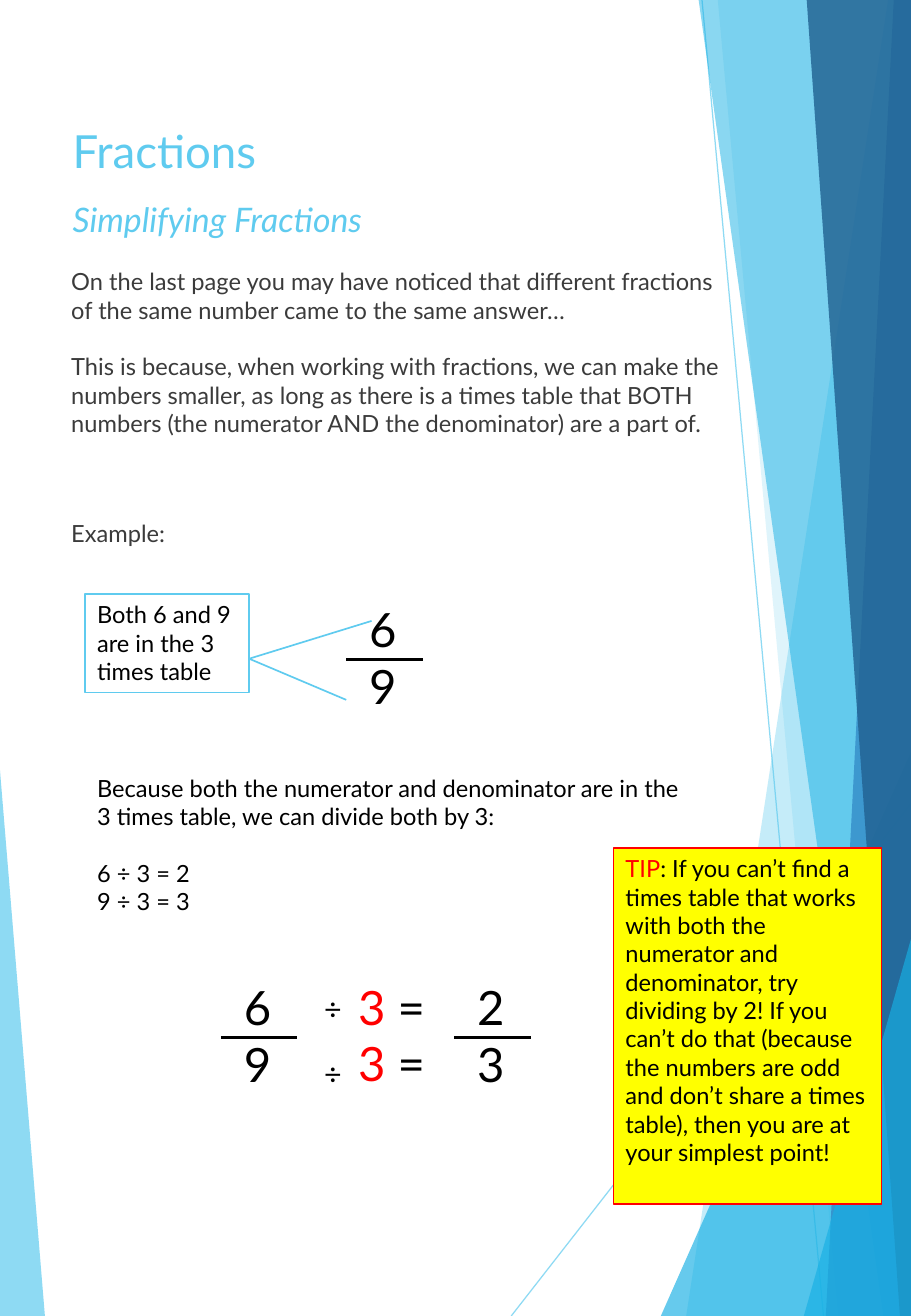
import dataclasses
import typing

import lxml.etree
import pptx
import pptx.dml.color
import pptx.enum.shapes
import pptx.enum.text
import pptx.oxml.ns
import pptx.util

Cm = pptx.util.Cm
Point = tuple[float, float]

WIDTH, HEIGHT = 19.05, 27.51


@dataclasses.dataclass(frozen=True)
class Theme:
    font: str = "Lato"
    sky: str = "5FCBEF"
    azure: str = "17B0E4"
    blue: str = "2E83C3"
    navy: str = "226292"
    grey: str = "3B3B3B"
    black: str = "000000"
    red: str = "FF0000"
    yellow: str = "FFFF00"
    title: float = 27
    head: float = 20
    body: float = 14
    sign: float = 18
    digit: float = 28
    gap: float = 16.8


THEME = Theme()


@dataclasses.dataclass(frozen=True)
class Shard:
    points: list[Point]
    colour: str
    alpha: int


@dataclasses.dataclass(frozen=True)
class Stroke:
    start: Point
    end: Point
    colour: str
    weight: float
    alpha: int = 100


@dataclasses.dataclass(frozen=True)
class Run:
    text: str
    colour: str


@dataclasses.dataclass(frozen=True)
class Para:
    runs: list[Run]
    gap: float = 0


@dataclasses.dataclass(frozen=True)
class Block:
    left: float
    top: float
    width: float
    height: float
    size: float
    paras: list[Para]
    slant: bool = False
    fill: typing.Optional[str] = None
    edge: typing.Optional[str] = None


@dataclasses.dataclass(frozen=True)
class Ratio:
    left: float
    bar: float
    upper: str
    lower: str


def band(top: float, foot: float) -> list[Point]:
    """Outline from a slanted edge to the right side of the page."""
    return [(top, 0), (foot, HEIGHT), (WIDTH, HEIGHT), (WIDTH, 0)]


def wedge(foot: float, peak: float) -> list[Point]:
    """Triangle in the lower right corner."""
    return [(foot, HEIGHT), (WIDTH, peak), (WIDTH, HEIGHT)]


def plain(text: str, colour: str = THEME.black, gap: float = 0) -> Para:
    return Para([Run(text, colour)], gap)


def rgb(code: str) -> pptx.dml.color.RGBColor:
    return pptx.dml.color.RGBColor.from_string(code)


def fade(shape, alpha: int) -> None:
    """Set the opacity, in percent, of the shape's first colour."""
    colour = shape.element.spPr.find(".//" + pptx.oxml.ns.qn("a:srgbClr"))
    node = lxml.etree.SubElement(colour, pptx.oxml.ns.qn("a:alpha"))
    node.set("val", str(alpha * 1000))


def draw_shard(slide, shard: Shard) -> None:
    points = [(Cm(x), Cm(y)) for x, y in shard.points]
    pen = slide.shapes.build_freeform(*points[0])
    pen.add_line_segments(points[1:], close=True)
    shape = pen.convert_to_shape()
    shape.shadow.inherit = False
    shape.fill.solid()
    shape.fill.fore_color.rgb = rgb(shard.colour)
    shape.line.fill.background()
    fade(shape, shard.alpha)


def draw_stroke(slide, stroke: Stroke) -> None:
    ends = [Cm(v) for v in stroke.start + stroke.end]
    kind = pptx.enum.shapes.MSO_CONNECTOR.STRAIGHT
    line = slide.shapes.add_connector(kind, *ends)
    line.line.color.rgb = rgb(stroke.colour)
    line.line.width = pptx.util.Pt(stroke.weight)
    if stroke.alpha < 100:
        fade(line, stroke.alpha)
    lxml.etree.SubElement(line.element.spPr, pptx.oxml.ns.qn("a:effectLst"))


def draw_block(slide, block: Block) -> None:
    place = [Cm(v) for v in (block.left, block.top, block.width, block.height)]
    if block.edge:
        kind = pptx.enum.shapes.MSO_SHAPE.RECTANGLE
        shape = slide.shapes.add_shape(kind, *place)
        shape.shadow.inherit = False
        shape.line.color.rgb = rgb(block.edge)
        shape.line.width = pptx.util.Pt(0.75)
    else:
        shape = slide.shapes.add_textbox(*place)
    if block.fill:
        shape.fill.solid()
        shape.fill.fore_color.rgb = rgb(block.fill)
    else:
        shape.fill.background()
    frame = shape.text_frame
    frame.word_wrap = True
    frame.vertical_anchor = pptx.enum.text.MSO_ANCHOR.TOP
    for i, para in enumerate(block.paras):
        line = frame.add_paragraph() if i else frame.paragraphs[0]
        line.alignment = pptx.enum.text.PP_ALIGN.LEFT
        line.space_before = pptx.util.Pt(para.gap)
        line.font.name = THEME.font
        line.font.size = pptx.util.Pt(block.size)
        line.font.italic = block.slant
        line.font.color.rgb = rgb(para.runs[0].colour)
        for part in para.runs:
            run = line.add_run()
            run.text = part.text
            if part.colour != para.runs[0].colour:
                run.font.color.rgb = rgb(part.colour)


def draw_ratio(slide, ratio: Ratio) -> None:
    start, end = (ratio.left, ratio.bar), (ratio.left + 1.6, ratio.bar)
    draw_stroke(slide, Stroke(start, end, THEME.black, 1.5))
    paras = [plain(ratio.upper), plain(ratio.lower)]
    draw_block(slide, Block(ratio.left + 0.23, ratio.bar - 1.36, 2.74, 2.64,
                            THEME.digit, paras))


THREE = Para([Run("3 ", THEME.red), Run("=", THEME.black)])
FORK = (5.21, 13.77)

ITEMS = [
    Shard([(0, 16.1), (0.94, HEIGHT), (0, HEIGHT)], THEME.sky, 70),
    Stroke((10.69, HEIGHT), (19.08, 16.76), THEME.sky, 0.75, 70),
    Stroke((14.68, 0), (17.22, HEIGHT), THEME.sky, 0.75, 70),
    Shard(band(18.57, 14.35), THEME.sky, 36),
    Shard(band(15.01, 17.53), THEME.sky, 20),
    Shard(wedge(13.82, 15.72), THEME.azure, 66),
    Shard(band(14.61, 18.47), THEME.azure, 50),
    Shard(band(18.69, 17.27), THEME.blue, 70),
    Shard(band(16.87, 18.82), THEME.navy, 82),
    Shard(wedge(16.81, 19.63), THEME.azure, 66),
    Block(1.27, 2.44, 13.23, 5.31, THEME.title, [plain("Fractions", THEME.sky)]),
    Block(1.24, 5.46, 14.38, 4.45, THEME.body, [
        plain("On the last page you may have noticed that different fractions of "
              "the same number came to the same answer…", THEME.grey),
        plain("This is because, when working with fractions, we can make the "
              "numbers smaller, as long as there is a times table that BOTH numbers "
              "(the numerator AND the denominator) are a part of.",
              THEME.grey, THEME.gap)]),
    Block(1.27, 4.04, 13.23, 5.31, THEME.head,
          [plain("Simplifying Fractions", THEME.sky)], slant=True),
    Block(1.24, 10.72, 14.38, 0.86, THEME.body, [plain("Example:", THEME.grey)]),
    Ratio(7.24, 13.79, "6", "9"),
    Stroke((7.77, 12.98), FORK, THEME.sky, 1),
    Stroke((7.24, 14.63), FORK, THEME.sky, 1),
    Block(1.78, 12.42, 3.43, 2.06, THEME.body,
          [plain("Both 6 and 9 are in the 3 times table")], edge=THEME.sky),
    Block(1.78, 16.05, 12.73, 3.25, THEME.body, [
        plain("Because both the numerator and denominator are in the 3 times "
              "table, we can divide both by 3:"),
        plain("6 ÷ 3 = 2", gap=THEME.gap),
        plain("9 ÷ 3 = 3")]),
    Ratio(4.62, 21.69, "6", "9"),
    Ratio(9.5, 21.69, "2", "3"),
    Block(6.53, 20.57, 2.74, 2.39, THEME.sign,
          [plain("÷"), plain("÷", gap=THEME.gap)]),
    Block(7.24, 20.32, 2.74, 2.64, THEME.digit, [THREE, THREE]),
    Block(12.83, 17.73, 5.61, 7.44, THEME.body, [Para([
        Run("TIP", THEME.red),
        Run(": If you can’t find a times table that works with both the numerator "
            "and denominator, try dividing by 2! If you can’t do that (because the "
            "numbers are odd and don’t share a times table), then you are at your "
            "simplest point!", THEME.black)])],
          fill=THEME.yellow, edge=THEME.red),
]

DRAW = {Shard: draw_shard, Stroke: draw_stroke, Block: draw_block, Ratio: draw_ratio}


def main() -> None:
    deck = pptx.Presentation()
    deck.slide_width, deck.slide_height = Cm(WIDTH), Cm(HEIGHT)
    slide = deck.slides.add_slide(deck.slide_layouts[6])
    for item in ITEMS:
        DRAW[type(item)](slide, item)
    deck.save("out.pptx")


if __name__ == "__main__":
    main()
